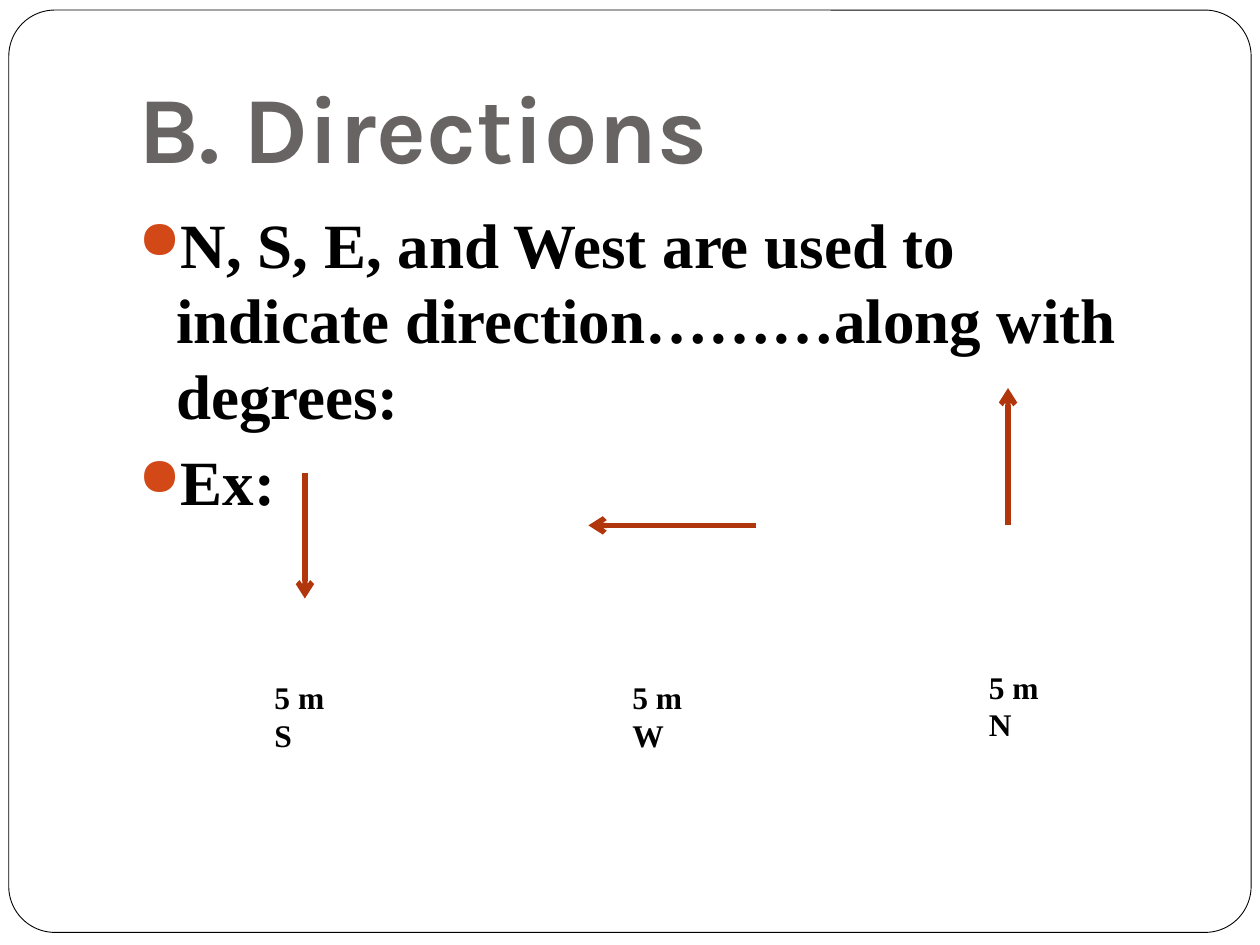
from lxml.etree import SubElement
from pptx import Presentation
from pptx.dml.color import RGBColor
from pptx.enum.shapes import MSO_CONNECTOR, MSO_SHAPE
from pptx.enum.text import MSO_ANCHOR
from pptx.oxml.ns import qn
from pptx.util import Inches, Pt

COLORS = {
    "paper": "FFFFFF",
    "text": "000000",
    "title": "696464",
    "bullet": "D34817",
    "arrow": "B1360B",
}


def color(name):
    return RGBColor.from_string(COLORS[name])


def add_frame(slide):
    frame = slide.shapes.add_shape(
        MSO_SHAPE.ROUNDED_RECTANGLE, Inches(0.07), Inches(0.08), Inches(9.86), Inches(7.32)
    )
    frame.adjustments[0] = 0.05
    frame.shadow.inherit = False
    frame.fill.solid()
    frame.fill.fore_color.rgb = color("paper")
    frame.line.color.rgb = color("text")
    frame.line.width = Pt(0.5)


def add_bullet(paragraph, indent=0.3):
    properties = paragraph._p.get_or_add_pPr()
    properties.set("marL", str(Inches(indent)))
    properties.set("indent", str(Inches(-indent)))
    bullet_color = SubElement(properties, qn("a:buClr"))
    SubElement(bullet_color, qn("a:srgbClr"), val=COLORS["bullet"])
    SubElement(properties, qn("a:buSzPct"), val="85000")
    SubElement(properties, qn("a:buChar"), char="●")


def add_text(slide, lines, left, top, width, height, *, size, font="Times New Roman",
             ink="text", anchor=MSO_ANCHOR.TOP, bottom=0.05, before=0, bulleted=False):
    box = slide.shapes.add_textbox(Inches(left), Inches(top), Inches(width), Inches(height))
    frame = box.text_frame
    frame.word_wrap = True
    frame.vertical_anchor = anchor
    frame.margin_bottom = Inches(bottom)
    frame.text = "\n".join(lines)
    for paragraph in frame.paragraphs:
        paragraph.space_before = Pt(before)
        if bulleted:
            add_bullet(paragraph)
        run_font = paragraph.runs[0].font
        run_font.name = font
        run_font.size = Pt(size)
        run_font.bold = True
        run_font.color.rgb = color(ink)


def add_arrow(slide, start, end):
    points = [Inches(value) for value in (*start, *end)]
    arrow = slide.shapes.add_connector(MSO_CONNECTOR.STRAIGHT, *points)
    arrow.line.color.rgb = color("arrow")
    arrow.line.width = Pt(3)
    SubElement(arrow.line._get_or_add_ln(), qn("a:tailEnd"), type="arrow")
    SubElement(arrow._element.spPr, qn("a:effectLst"))


def main():
    presentation = Presentation()
    presentation.slide_width = Inches(10)
    presentation.slide_height = Inches(7.5)
    slide = presentation.slides.add_slide(presentation.slide_layouts[6])

    add_frame(slide)
    add_text(slide, ["B. Directions"], 1, 0.3, 8.5, 1.25, size=54, font="Karla",
             ink="title", anchor=MSO_ANCHOR.BOTTOM, bottom=0.1)
    add_text(
        slide,
        ["N, S, E, and West are used to indicate direction………along with degrees:", "Ex:"],
        1, 1.58, 8.5, 5, size=36, before=5.8, bulleted=True,
    )

    examples = [
        ("5 m S", (2.42, 3.75), (2.42, 4.75), (2.08, 5.33, 0.75)),
        ("5 m W", (6, 4.17), (4.67, 4.17), (4.92, 5.33, 0.83)),
        ("5 m N", (8, 4.17), (8, 3.08), (7.75, 5.25, 0.83)),
    ]
    for label, start, end, label_place in examples:
        add_arrow(slide, start, end)
        add_text(slide, [label], *label_place, 0.4, size=18)

    presentation.save("out.pptx")


if __name__ == "__main__":
    main()
